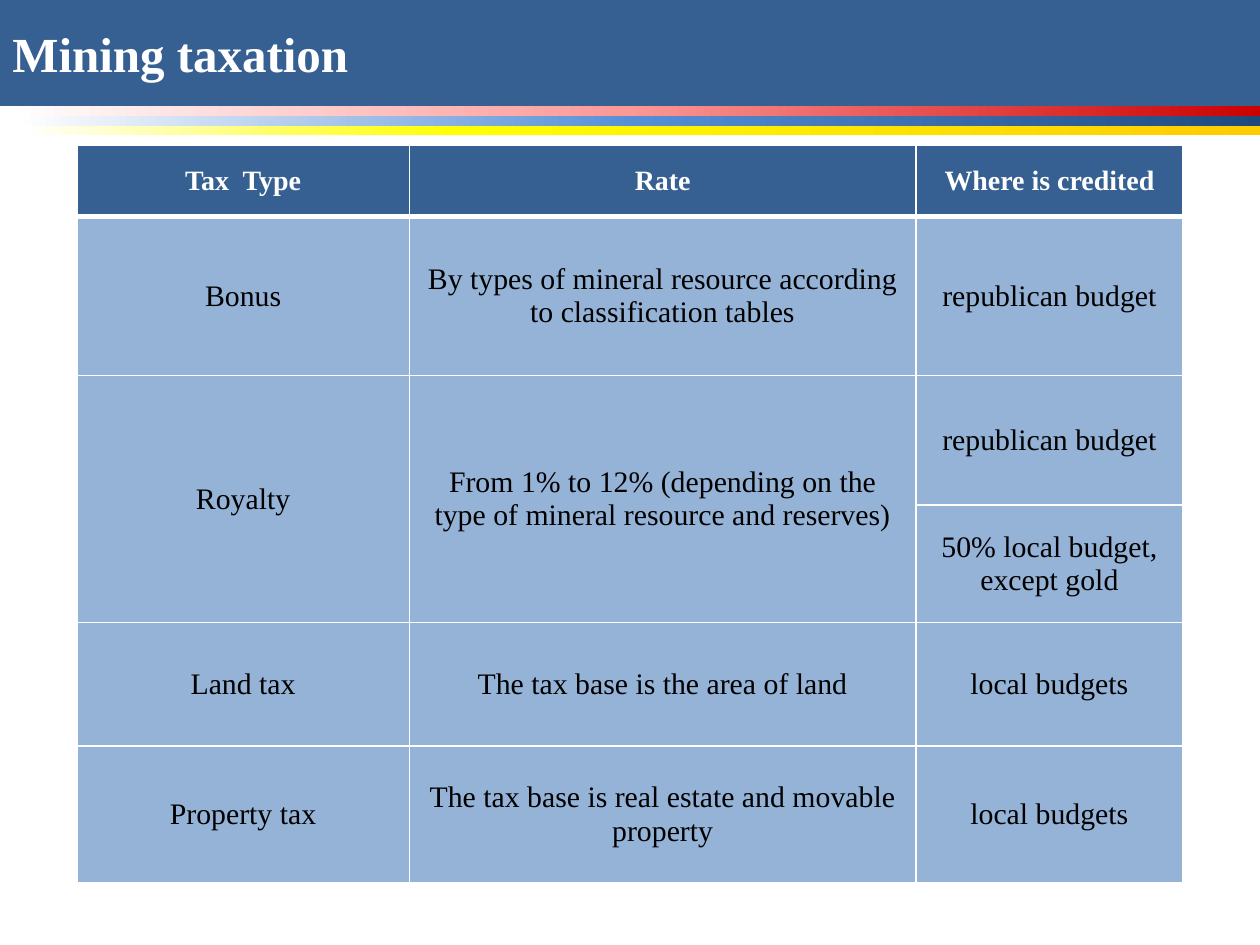
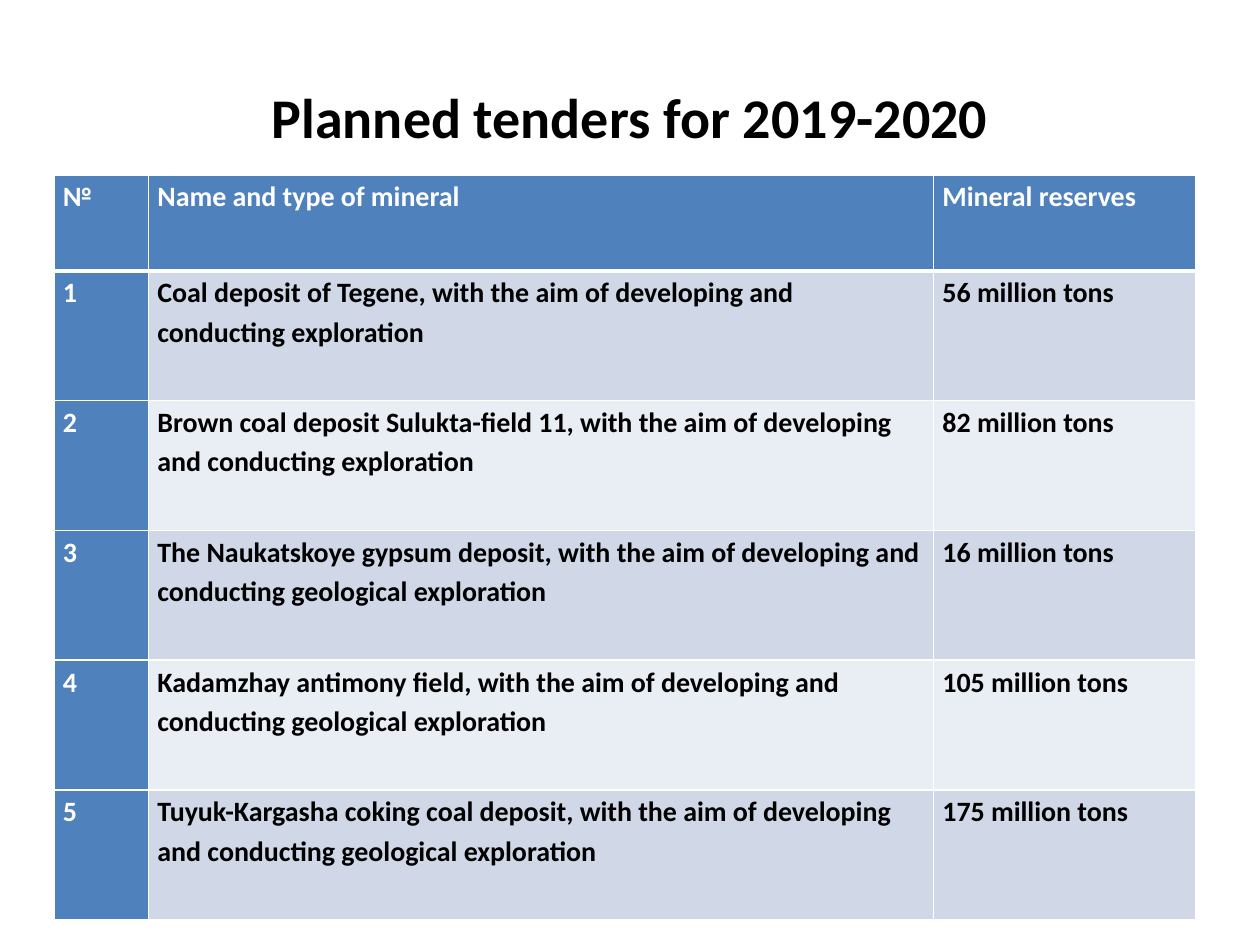
from dataclasses import dataclass

import pptx
import pptx.dml.color
import pptx.enum.shapes
import pptx.enum.text
import pptx.oxml
import pptx.oxml.ns
import pptx.slide
import pptx.table
import pptx.text.text
import pptx.util

Pt = pptx.util.Pt
qn = pptx.oxml.ns.qn
ALIGN = pptx.enum.text.PP_ALIGN
ANCHOR = pptx.enum.text.MSO_ANCHOR
RECT = pptx.enum.shapes.MSO_SHAPE.RECTANGLE

COLORS = {
    "white": "FFFFFF", "black": "000000",
    "navy": "376092", "sky": "95B3D7",
    "blue": "4F81BD", "band_dark": "D0D8E8", "band_light": "E9EDF4",
    "mid_blue": "558ED5", "deep_blue": "1F497D",
    "pink": "FC9896", "red": "CC0000",
    "yellow": "FFFF00", "gold": "FFCC00",
}
SERIF, SANS = "Times New Roman", "Calibri"


@dataclass(frozen=True)
class Box:
    left: float
    top: float
    width: float
    height: float

    def lengths(self) -> tuple:
        return Pt(self.left), Pt(self.top), Pt(self.width), Pt(self.height)


@dataclass(frozen=True)
class TextStyle:
    font: str
    size: float
    color: str
    bold: bool = True
    align: ALIGN = ALIGN.LEFT
    anchor: ANCHOR = ANCHOR.MIDDLE
    line_spacing: float = 1.0
    space_after: float = 0


@dataclass(frozen=True)
class Stripe:
    box: Box
    stops: tuple[tuple[int, str], ...]


@dataclass(frozen=True)
class TableLook:
    header: TextStyle
    body: TextStyle
    header_fill: str
    body_fills: tuple[str, ...]
    margin_x: float = 7.2
    margin_y: float = 3.6
    header_column: bool = False


@dataclass(frozen=True)
class TableSpec:
    left: float
    top: float
    columns: tuple[float, ...]
    rows: tuple[float, ...]
    texts: tuple[tuple, ...]  # None continues the cell above
    look: TableLook


STRIPES = (
    Stripe(Box(9.36, 66.24, 711.36, 5.76),
           ((0, "white"), (50, "mid_blue"), (100, "deep_blue"))),
    Stripe(Box(-2.88, 60.48, 723.6, 5.76),
           ((1, "white"), (50, "pink"), (100, "red"))),
    Stripe(Box(12.24, 72, 708.48, 5.04),
           ((0, "white"), (35, "yellow"), (100, "gold"))),
)

TAXES = TableSpec(
    43.92, 82.8, (190.08, 289.44, 152.64),
    (41.04, 90.72, 74.16, 66.96, 70.56, 78.48),
    (
        ("Tax  Type", "Rate", "Where is credited"),
        ("Bonus", "By types of mineral resource according to classification tables",
         "republican budget"),
        ("Royalty",
         "From 1% to 12% (depending on the type of mineral resource and reserves)",
         "republican budget"),
        (None, None, "50% local budget, except gold"),
        ("Land tax", "The tax base is the area of land", "local budgets"),
        ("Property tax", "The tax base is real estate and movable property",
         "local budgets"),
    ),
    TableLook(
        TextStyle(SERIF, 16, "white", align=ALIGN.CENTER),
        TextStyle(SERIF, 17, "black", bold=False, align=ALIGN.CENTER),
        "navy", ("sky",)),
)

DEPOSITS = (
    ("Coal deposit of Tegene, with the aim of developing and conducting exploration", 56),
    ("Brown coal deposit Sulukta-field 11, with the aim of developing "
     "and conducting exploration", 82),
    ("The Naukatskoye gypsum deposit, with the aim of developing and "
     "conducting geological exploration", 16),
    ("Kadamzhay antimony field, with the aim of developing and "
     "conducting geological exploration", 105),
    ("Tuyuk-Kargasha coking coal deposit, with the aim of developing "
     "and conducting geological exploration", 175),
)
TENDER_TEXT = {"anchor": ANCHOR.TOP, "line_spacing": 1.15, "space_after": 8}
TENDERS = TableSpec(
    30.96, 100.08, (54, 448.56, 149.76), (54.72,) + (74.16,) * len(DEPOSITS),
    (("№", "Name and type of mineral", "Mineral reserves"),)
    + tuple((str(n), name, f"{tons} million tons")
            for n, (name, tons) in enumerate(DEPOSITS, 1)),
    TableLook(
        TextStyle(SANS, 16, "white", **TENDER_TEXT),
        TextStyle(SANS, 16, "black", **TENDER_TEXT),
        "blue", ("band_dark", "band_light"),
        margin_x=5.04, margin_y=0, header_column=True),
)


def rgb(name: str) -> pptx.dml.color.RGBColor:
    return pptx.dml.color.RGBColor.from_string(COLORS[name])


def write(tf: pptx.text.text.TextFrame, text: str, style: TextStyle) -> None:
    p = tf.paragraphs[0]
    p.text = text
    p.alignment = style.align
    p.line_spacing = style.line_spacing
    p.space_after = Pt(style.space_after)
    p.font.name = style.font
    p.font.size = Pt(style.size)
    p.font.bold = style.bold
    p.font.color.rgb = rgb(style.color)


def add_title(s: pptx.slide.Slide, text: str, box: Box, style: TextStyle,
              fill: str | None = None) -> None:
    if fill:
        sp = s.shapes.add_shape(RECT, *box.lengths())
        sp.shadow.inherit = False
        sp.fill.solid()
        sp.fill.fore_color.rgb = rgb(fill)
        sp.line.fill.background()
    else:
        sp = s.shapes.add_textbox(*box.lengths())
    tf = sp.text_frame
    tf.word_wrap = True
    tf.vertical_anchor = style.anchor
    write(tf, text, style)


def add_stripes(s: pptx.slide.Slide, stripes: tuple[Stripe, ...]) -> None:
    group = s.shapes.add_group_shape()
    for stripe in stripes:
        sp = group.shapes.add_shape(RECT, *stripe.box.lengths())
        sp.shadow.inherit = False
        sp.line.fill.background()
        sp.fill.gradient()
        sp.fill.gradient_angle = 0
        stops = next(sp._element.iter(qn("a:gsLst")))
        for old in list(stops):
            stops.remove(old)
        for percent, color in stripe.stops:
            stops.append(pptx.oxml.parse_xml(
                f'<a:gs {pptx.oxml.ns.nsdecls("a")} pos="{percent * 1000}">'
                f'<a:srgbClr val="{COLORS[color]}"/></a:gs>'))


def set_borders(cell: pptx.table._Cell, top: float, bottom: float) -> None:
    """Draw white borders; the sides are always 1 pt."""
    tc_pr = cell._tc.get_or_add_tcPr()
    for i, (side, width) in enumerate(zip("LRTB", (1, 1, top, bottom))):
        tc_pr.insert(i, pptx.oxml.parse_xml(
            f'<a:ln{side} {pptx.oxml.ns.nsdecls("a")} w="{Pt(width)}">'
            f'<a:solidFill><a:srgbClr val="{COLORS["white"]}"/></a:solidFill>'
            f'</a:ln{side}>'))


def add_table(s: pptx.slide.Slide, spec: TableSpec) -> None:
    look = spec.look
    box = Box(spec.left, spec.top, sum(spec.columns), sum(spec.rows))
    table = s.shapes.add_table(
        len(spec.rows), len(spec.columns), *box.lengths()).table
    table.horz_banding = False
    for column, width in zip(table.columns, spec.columns):
        column.width = Pt(width)
    for row, height in zip(table.rows, spec.rows):
        row.height = Pt(height)
    for r, texts in enumerate(spec.texts):
        for c, text in enumerate(texts):
            cell = table.cell(r, c)
            is_header = r == 0 or (look.header_column and c == 0)
            style = look.header if is_header else look.body
            fill = (look.header_fill if is_header
                    else look.body_fills[(r - 1) % len(look.body_fills)])
            cell.fill.solid()
            cell.fill.fore_color.rgb = rgb(fill)
            set_borders(cell, 3 if r == 1 else 1, 3 if r == 0 else 1)
            cell.margin_left = cell.margin_right = Pt(look.margin_x)
            cell.margin_top = cell.margin_bottom = Pt(look.margin_y)
            cell.vertical_anchor = style.anchor
            if text is None:
                table.cell(r - 1, c).merge(cell)
            else:
                write(cell.text_frame, text, style)


def main() -> None:
    prs = pptx.Presentation()
    prs.slide_width, prs.slide_height = Pt(720), Pt(540)
    blank = prs.slide_layouts[6]

    s = prs.slides.add_slide(blank)
    add_table(s, TAXES)
    add_title(s, "Mining taxation", Box(0, 0, 720, 60.48),
              TextStyle(SERIF, 28, "white"), fill="navy")
    add_stripes(s, STRIPES)

    s = prs.slides.add_slide(blank)
    add_title(s, "Planned tenders for 2019-2020", Box(36, 21.6, 648, 90),
              TextStyle(SANS, 32, "black", align=ALIGN.CENTER))
    add_table(s, TENDERS)

    prs.save("out.pptx")


if __name__ == "__main__":
    main()
